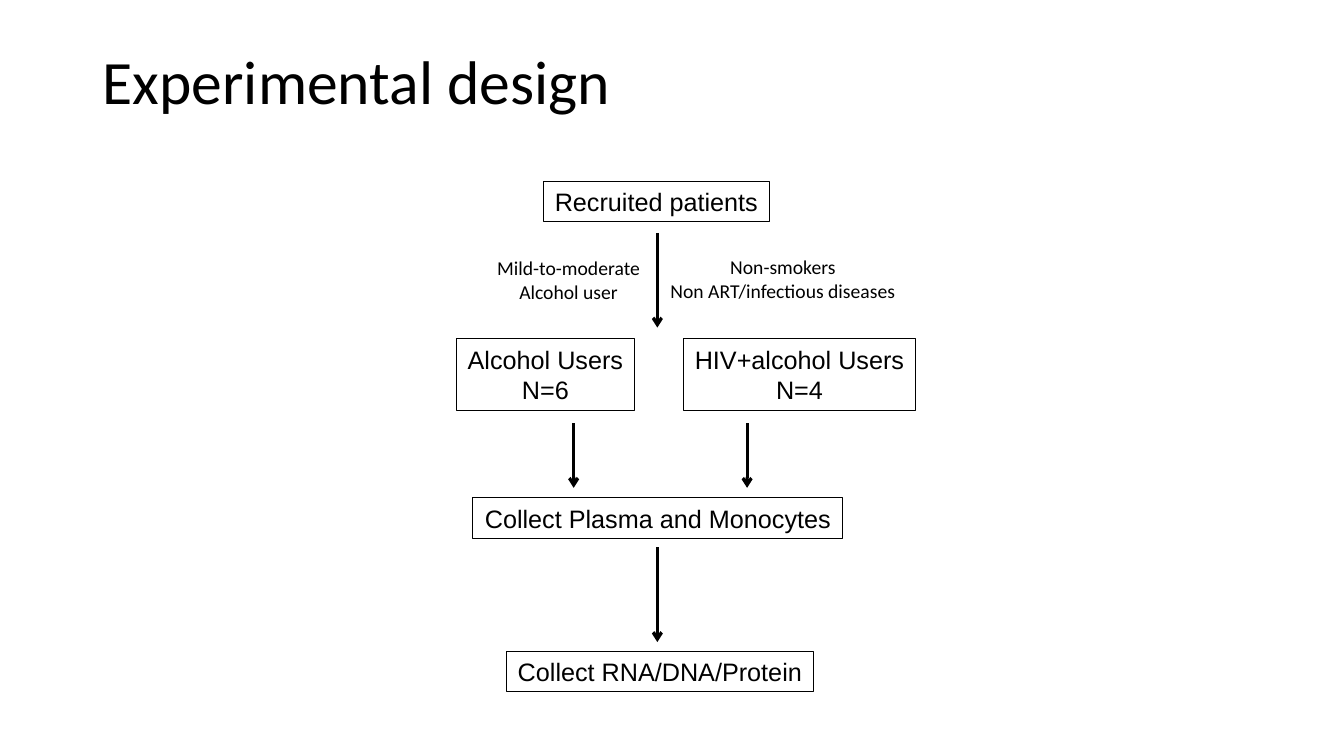
from lxml.etree import SubElement
from pptx import Presentation
from pptx.dml.color import RGBColor
from pptx.enum.shapes import MSO_CONNECTOR, MSO_SHAPE
from pptx.enum.text import MSO_ANCHOR, PP_ALIGN
from pptx.oxml.ns import qn
from pptx.util import Pt

PX = 9144
BLACK = RGBColor(0, 0, 0)


def px(*lengths):
    """Turn lengths in px into EMU."""
    return [n * PX for n in lengths]


def write(tf, text, font, size, align=PP_ALIGN.CENTER):
    """Fill a text frame and format each paragraph."""
    tf.text = text
    tf.vertical_anchor = MSO_ANCHOR.MIDDLE
    for p in tf.paragraphs:
        p.alignment = align
        for r in p.runs:
            r.font.name = font
            r.font.size = Pt(size)
            r.font.color.rgb = BLACK


def add_title(s, text, box):
    """Place and format the slide title."""
    sp = s.shapes.title
    sp.left, sp.top, sp.width, sp.height = px(*box)
    write(sp.text_frame, text, "Calibri", 44, PP_ALIGN.LEFT)
    sp.text_frame.paragraphs[0].line_spacing = 0.9


def add_step(s, text, box):
    """Add an outlined step of the flow."""
    sp = s.shapes.add_shape(MSO_SHAPE.RECTANGLE, *px(*box))
    sp.shadow.inherit = False
    sp.fill.background()
    sp.line.color.rgb = BLACK
    sp.line.width = Pt(0.75)
    sp.text_frame.word_wrap = False
    write(sp.text_frame, text, "Arial", 18)


def add_criteria(s, text, box):
    """Add a plain label with selection criteria."""
    tf = s.shapes.add_textbox(*px(*box)).text_frame
    tf.word_wrap = False
    write(tf, text, "Calibri", 14)


def add_arrow(s, x, top, length):
    """Add an arrow pointing straight down."""
    cx = s.shapes.add_connector(MSO_CONNECTOR.STRAIGHT, *px(x, top, x, top + length))
    cx.line.color.rgb = BLACK
    cx.line.width = Pt(2.25)
    SubElement(cx.line._get_or_add_ln(), qn("a:tailEnd"), type="arrow")
    SubElement(cx._element.spPr, qn("a:effectLst"))


def add_flow(s, box):
    """Add the steps, criteria and arrows of the study flow."""
    left, top, width, height = box
    steps = [
        ("Recruited patients", 86, 0, 224, 40),
        ("Alcohol Users\nN=6", 0, 156, 176, 71),
        ("HIV+alcohol Users\nN=4", width - 230, 156, 230, 71),
        ("Collect Plasma and Monocytes", 16, 314, 367, 40),
        ("Collect RNA/DNA/Protein", 49, height - 40, 305, 40),
    ]
    for text, x, y, w, h in steps:
        add_step(s, text, (left + x, top + y, w, h))
    criteria = [
        ("Mild-to-moderate\nAlcohol user", 23, 69, 176),
        ("Non-smokers\nNon ART/infectious diseases", 201, 68, 245),
    ]
    for text, x, y, w in criteria:
        add_criteria(s, text, (left + x, top + y, w, 57))
    for x, y, length in [(199, 51, 94), (116, 240, 64), (288, 240, 64), (199, 363, 94)]:
        add_arrow(s, left + x, top + y, length)


def main():
    """Build and save the slide."""
    prs = Presentation()
    prs.slide_width, prs.slide_height = px(1333, 750)
    s = prs.slides.add_slide(prs.slide_layouts[5])
    add_title(s, "Experimental design", (92, 32, 1150, 104))
    add_flow(s, (453, 180, 455, 506))
    prs.save("out.pptx")


if __name__ == "__main__":
    main()
